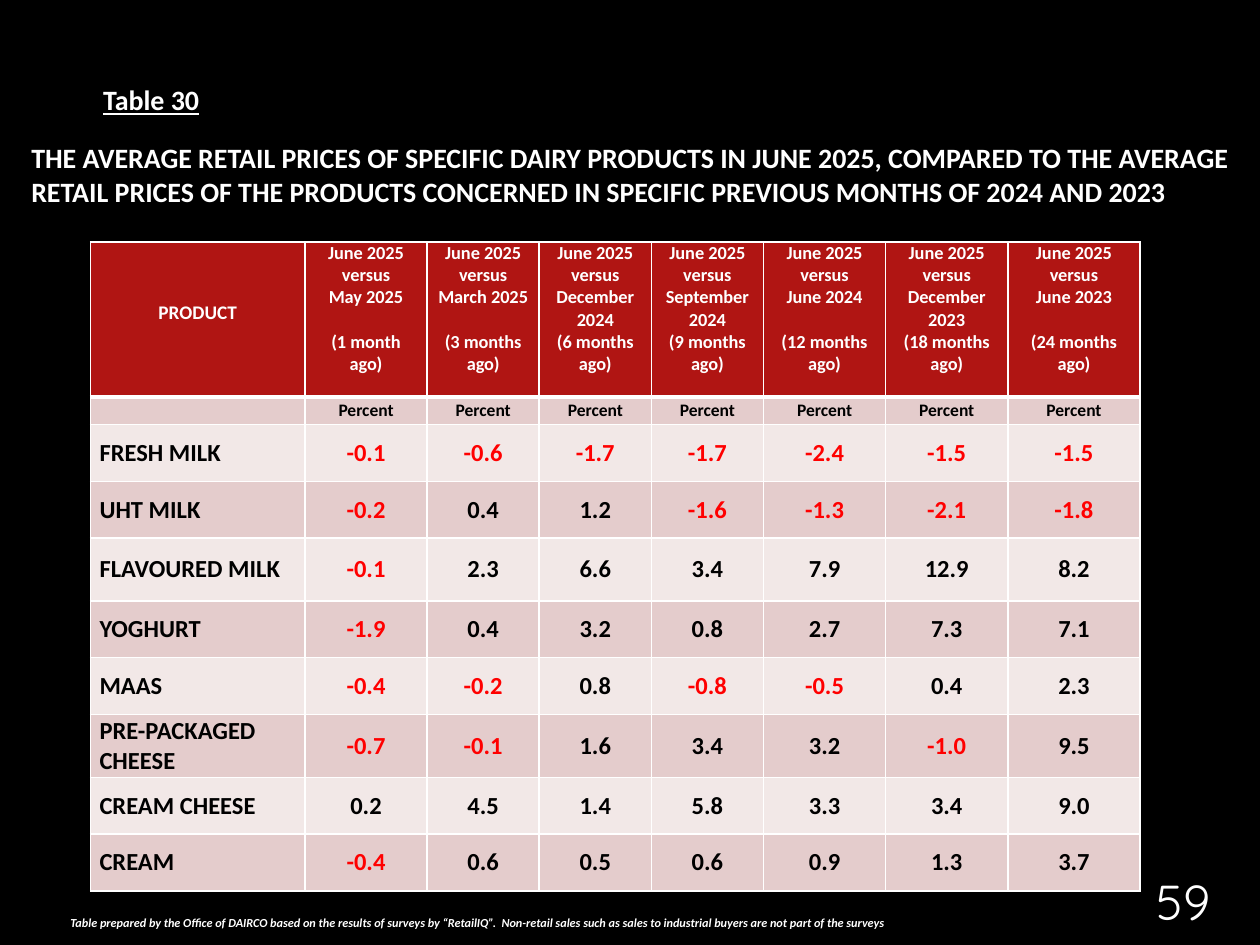
from dataclasses import dataclass
from typing import NamedTuple

from lxml.etree import SubElement
from pptx import Presentation
from pptx.dml.color import RGBColor as RGB
from pptx.enum.text import MSO_ANCHOR as Anchor, PP_ALIGN as Align
from pptx.oxml.ns import qn
from pptx.util import Inches, Pt


@dataclass(frozen=True)
class Theme:
    font: str = "Calibri"
    page_font: str = "Quicksand"
    black: str = "000000"
    white: str = "FFFFFF"
    red: str = "FF0000"
    head: str = "B01513"
    dark: str = "E4CCCC"
    light: str = "F2E8E7"
    note_size: float = 7
    unit_size: float = 10
    head_size: float = 10.5
    name_size: float = 11
    body_size: float = 14
    title_size: float = 16
    page_size: float = 28


THEME = Theme()


class Style(NamedTuple):
    size: float
    color: str = THEME.white
    align: Align = Align.LEFT
    font: str = THEME.font
    bold: bool = True
    italic: bool = False
    under: bool = False


class Label(NamedTuple):
    text: str
    box: tuple[float, float, float, float]
    style: Style
    anchor: Anchor = Anchor.MIDDLE


class Period(NamedTuple):
    base: str
    ago: str


class Product(NamedTuple):
    name: str
    rates: tuple[float, ...]


LABELS = [
    Label("Table prepared by the Office of DAIRCO based on the results of surveys by "
          "“RetailIQ”.  Non-retail sales such as sales to industrial buyers "
          "are not part of the surveys",
          (0.46, 7.21, 9.42, 0.22), Style(THEME.note_size, italic=True)),
    Label("Table 30", (0.72, 0.61, 1.41, 0.37),
          Style(THEME.title_size, under=True), Anchor.TOP),
    Label("THE AVERAGE RETAIL PRICES OF SPECIFIC DAIRY PRODUCTS IN JUNE 2025, "
          "COMPARED TO THE AVERAGE RETAIL PRICES OF THE PRODUCTS CONCERNED IN "
          "SPECIFIC PREVIOUS MONTHS OF 2024 AND 2023",
          (0.15, 0.93, 9.72, 0.91), Style(THEME.title_size)),
    Label("59", (8.92, 6.7, 0.94, 0.73),
          Style(THEME.page_size, align=Align.CENTER, font=THEME.page_font, bold=False),
          Anchor.BOTTOM),
]
PERIODS = [
    Period("May 2025", "1 month"),
    Period("March 2025", "3 months"),
    Period("December 2024", "6 months"),
    Period("September 2024", "9 months"),
    Period("June 2024", "12 months"),
    Period("December 2023", "18 months"),
    Period("June 2023", "24 months"),
]
PRODUCTS = [
    Product("FRESH MILK", (-0.1, -0.6, -1.7, -1.7, -2.4, -1.5, -1.5)),
    Product("UHT MILK", (-0.2, 0.4, 1.2, -1.6, -1.3, -2.1, -1.8)),
    Product("FLAVOURED MILK", (-0.1, 2.3, 6.6, 3.4, 7.9, 12.9, 8.2)),
    Product("YOGHURT", (-1.9, 0.4, 3.2, 0.8, 2.7, 7.3, 7.1)),
    Product("MAAS", (-0.4, -0.2, 0.8, -0.8, -0.5, 0.4, 2.3)),
    Product("PRE-PACKAGED CHEESE", (-0.7, -0.1, 1.6, 3.4, 3.2, -1.0, 9.5)),
    Product("CREAM CHEESE", (0.2, 4.5, 1.4, 5.8, 3.3, 3.4, 9.0)),
    Product("CREAM", (-0.4, 0.6, 0.5, 0.6, 0.9, 1.3, 3.7)),
]
COLS = [1.7, 0.97, 0.89, 0.89, 0.89, 0.97, 0.97, 1.05]
ROWS = [1.23, 0.22, 0.45, 0.45, 0.5, 0.45, 0.45, 0.5, 0.45, 0.45]
LINE = 12.8  # points, one line of header text
SHORT = 10   # longest month text that fits on one line


def write(frame, lines: list[str], style: Style) -> None:
    frame.text = "\n".join(lines)
    for para in frame.paragraphs:
        para.alignment = style.align
        font = para.font
        font.name, font.size = style.font, Pt(style.size)
        font.bold, font.italic, font.underline = style.bold, style.italic, style.under
        font.color.rgb = RGB.from_string(style.color)


def add_label(slide, label: Label) -> None:
    box = slide.shapes.add_textbox(*map(Inches, label.box))
    frame = box.text_frame
    frame.word_wrap = True
    frame.vertical_anchor = label.anchor
    write(frame, [label.text], label.style)


def add_edges(cell, base: float) -> None:
    """Draw white borders; base is the width of the bottom one in points."""
    props = cell._tc.get_or_add_tcPr()
    for side, width in (("L", 1), ("R", 1), ("T", 1), ("B", base)):
        line = SubElement(props, qn(f"a:ln{side}"), w=str(Pt(width)))
        fill = SubElement(line, qn("a:solidFill"))
        SubElement(fill, qn("a:srgbClr"), val=THEME.white)


def set_cell(cell, lines: list[str], style: Style, fill: str,
             anchor: Anchor = Anchor.MIDDLE, base: float = 1) -> None:
    add_edges(cell, base)
    cell.fill.solid()
    cell.fill.fore_color.rgb = RGB.from_string(fill)
    cell.margin_left = cell.margin_right = Inches(0.07)
    cell.margin_top = cell.margin_bottom = 0
    cell.vertical_anchor = anchor
    write(cell.text_frame, lines, style)


def fill_head(table) -> None:
    first = table.cell(0, 0)
    set_cell(first, ["PRODUCT"], Style(THEME.name_size, align=Align.CENTER),
             THEME.head, Anchor.TOP, 3)
    first.margin_top = Inches(0.47)
    style = Style(THEME.head_size, align=Align.CENTER)
    for col, period in enumerate(PERIODS, 1):
        cell = table.cell(0, col)
        lines = ["June 2025 versus", period.base, f"({period.ago} ago)"]
        set_cell(cell, lines, style, THEME.head, Anchor.TOP, 3)
        if len(period.base) <= SHORT:
            cell.text_frame.paragraphs[-1].space_before = Pt(LINE)


def fill_units(table) -> None:
    style = Style(THEME.unit_size, THEME.black, Align.CENTER)
    for col in range(len(COLS)):
        cell = table.cell(1, col)
        set_cell(cell, ["Percent" if col else ""], style, THEME.dark, Anchor.TOP)
        cell.text_frame.paragraphs[0].line_spacing = Pt(13.9)


def fill_body(table) -> None:
    for row, item in enumerate(PRODUCTS, 2):
        fill = THEME.dark if row % 2 else THEME.light
        set_cell(table.cell(row, 0), [item.name],
                 Style(THEME.body_size, THEME.black), fill)
        for col, rate in enumerate(item.rates, 1):
            color = THEME.red if rate < 0 else THEME.black
            set_cell(table.cell(row, col), [f"{rate:.1f}"],
                     Style(THEME.body_size, color, Align.CENTER), fill)


def add_prices(slide) -> None:
    box = (0.72, 1.92, sum(COLS), sum(ROWS))
    table = slide.shapes.add_table(len(ROWS), len(COLS), *map(Inches, box)).table
    for col, width in zip(table.columns, COLS):
        col.width = Inches(width)
    for row, height in zip(table.rows, ROWS):
        row.height = Inches(height)
    fill_head(table)
    fill_units(table)
    fill_body(table)


def main() -> None:
    deck = Presentation()
    deck.slide_width, deck.slide_height = Inches(10), Inches(7.5)
    slide = deck.slides.add_slide(deck.slide_layouts[6])
    slide.background.fill.solid()
    slide.background.fill.fore_color.rgb = RGB.from_string(THEME.black)
    for label in LABELS:
        add_label(slide, label)
    add_prices(slide)
    deck.save("out.pptx")


if __name__ == "__main__":
    main()
